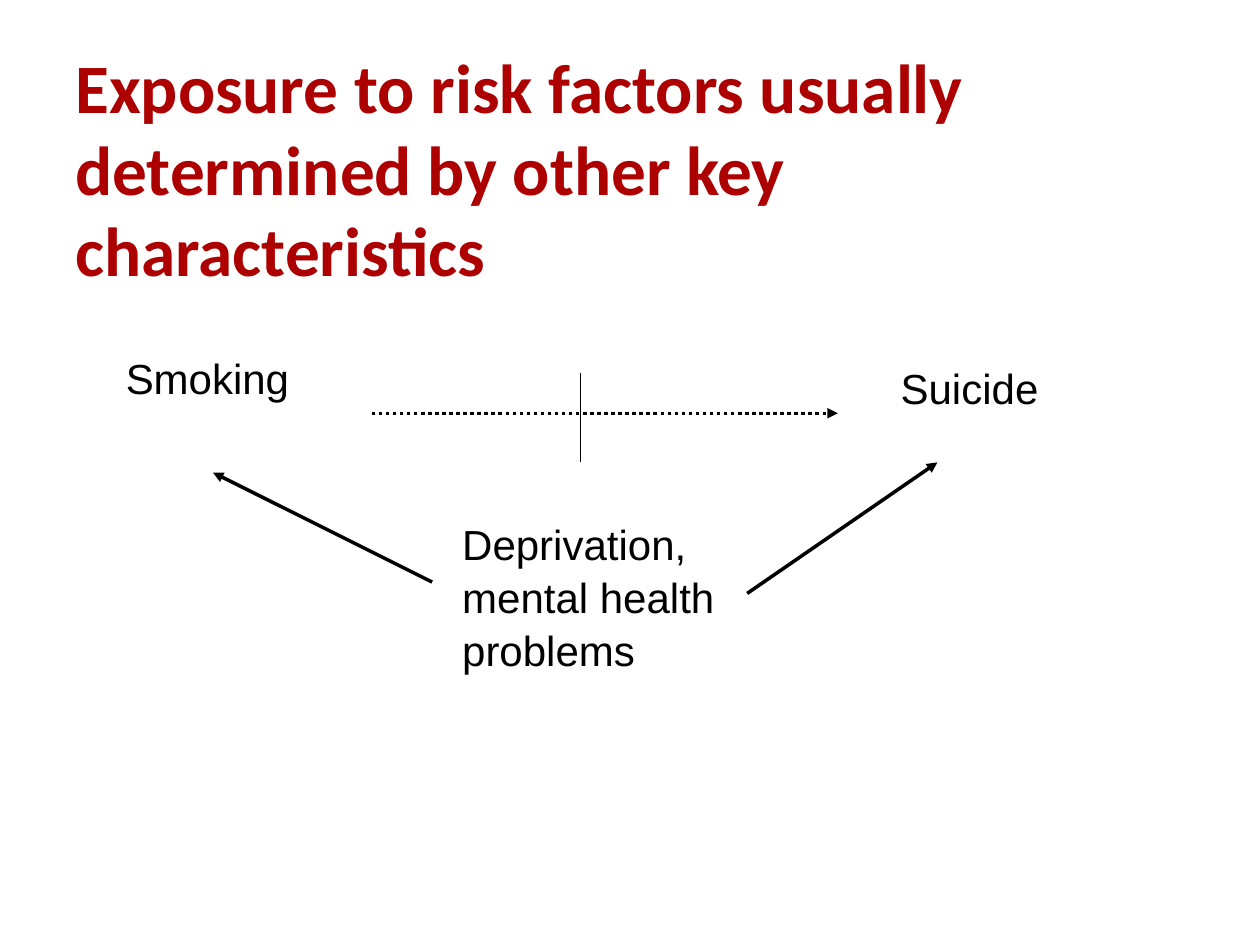
from lxml.etree import SubElement
from pptx import Presentation
from pptx.dml.color import RGBColor
from pptx.enum.dml import MSO_LINE
from pptx.enum.shapes import MSO_CONNECTOR
from pptx.enum.text import MSO_ANCHOR, MSO_AUTO_SIZE
from pptx.oxml.ns import qn
from pptx.util import Inches, Pt


def rgb(value):
    return RGBColor.from_string(value)


class Deck:
    """Style and current slide, on a grid of 100 columns by 75 rows."""

    COLUMNS, ROWS = 100, 75
    RED, BLACK = "AD0101", "000000"

    def __init__(self):
        self.prs = Presentation()
        self.prs.slide_width, self.prs.slide_height = Inches(10), Inches(7.5)
        self.s = self.prs.slides.add_slide(self.prs.slide_layouts[6])

    def x(self, columns):
        return round(self.prs.slide_width * columns / self.COLUMNS)

    def y(self, rows):
        return round(self.prs.slide_height * rows / self.ROWS)

    def text(self, text, left, top, width, height, font="Arial", size=24,
             color=BLACK, bold=False, spacing=1.05, anchor=MSO_ANCHOR.TOP,
             auto_size=MSO_AUTO_SIZE.SHAPE_TO_FIT_TEXT):
        sp = self.s.shapes.add_textbox(self.x(left), self.y(top),
                                       self.x(width), self.y(height))
        tf = sp.text_frame
        tf.word_wrap, tf.auto_size = True, auto_size
        tf.vertical_anchor = anchor
        p = tf.paragraphs[0]
        p.text, p.line_spacing = text, spacing
        p.font.name, p.font.size, p.font.bold = font, Pt(size), bold
        p.font.color.rgb = rgb(color)

    def title(self, text):
        self.text(text, 5, 3, 90, 21.1, font="Calibri", size=39.6,
                  color=self.RED, bold=True, spacing=0.98,
                  anchor=MSO_ANCHOR.MIDDLE, auto_size=MSO_AUTO_SIZE.NONE)

    def line(self, start, end, width=2, dash=None, arrow=True):
        cn = self.s.shapes.add_connector(
            MSO_CONNECTOR.STRAIGHT, self.x(start[0]), self.y(start[1]),
            self.x(end[0]), self.y(end[1]))
        cn.line.color.rgb, cn.line.width = rgb(self.BLACK), Pt(width)
        if dash:
            cn.line.dash_style = dash
        if arrow:
            SubElement(cn.line._get_or_add_ln(), qn("a:tailEnd"), type="triangle")
        SubElement(cn._element.spPr, qn("a:effectLst"))


def main():
    deck = Deck()
    deck.title("Exposure to risk factors usually determined by other key characteristics")
    deck.text("Smoking", 9, 27.3, 30.7, 5)
    deck.text("Suicide", 70.5, 28.1, 19.7, 5)
    deck.text("Deprivation, mental health problems", 35.7, 40.5, 23.6, 13.1)
    deck.line((29.5, 32.8), (66.5, 32.8), dash=MSO_LINE.ROUND_DOT)
    deck.line((34.3, 46.2), (16.9, 37.5))
    deck.line((59.3, 47.1), (74.4, 36.7))
    deck.line((46.1, 29.6), (46.1, 36.7), width=0.75, arrow=False)
    deck.prs.save("out.pptx")


if __name__ == "__main__":
    main()
